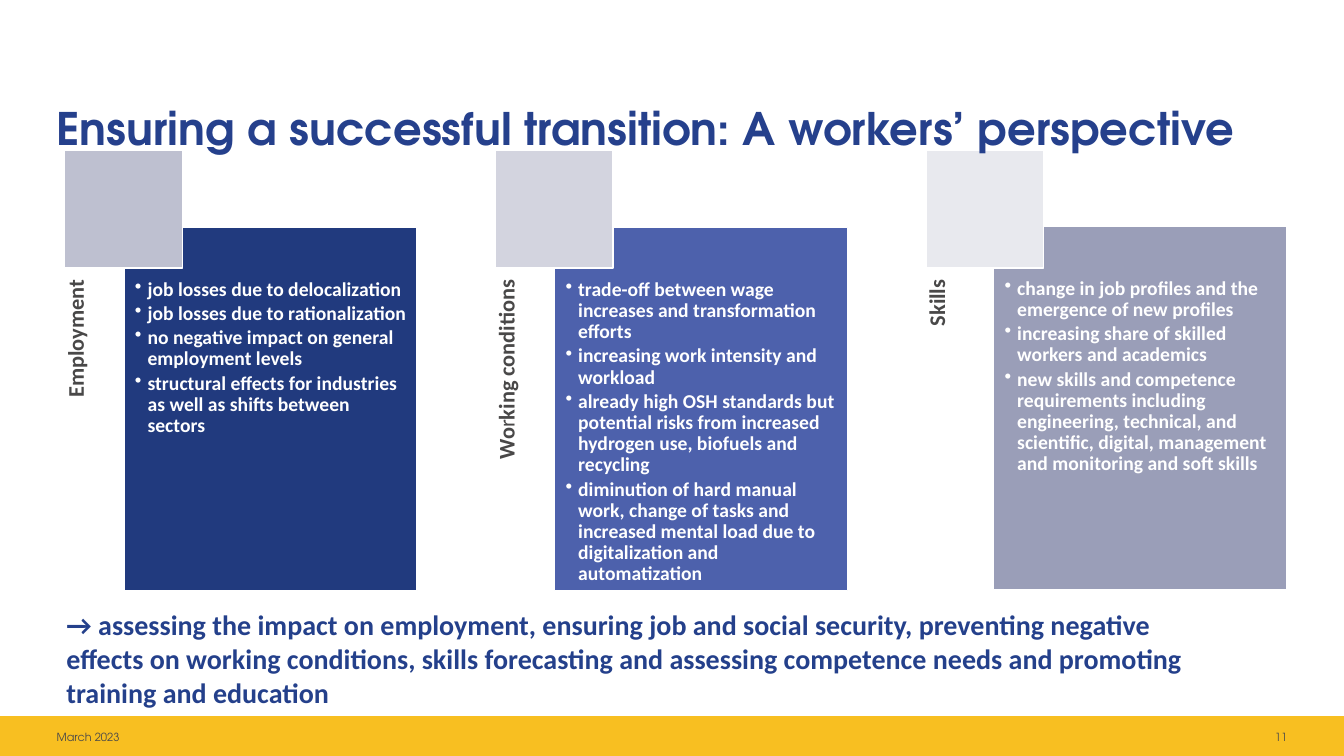
from lxml import etree
from pptx import Presentation
from pptx import util as u
from pptx.dml.color import RGBColor
from pptx.enum import shapes, text
from pptx.oxml.ns import qn

COLOURS = {
    "white": "FFFFFF", "title": "25408C", "conclusion": "24408B",
    "label": "494848", "footer": "4A4949", "band": "F8BF21",
}
BODY, DISPLAY = "Calibri", "TeX Gyre Adventor"
TITLE = "Ensuring a successful transition: A workers’ perspective"
CONCLUSION = (
    "→ assessing the impact on employment, ensuring job and social security, "
    "preventing negative effects on working conditions, skills forecasting and "
    "assessing competence needs and promoting training and education"
)
# Label runs are (text, bold); the panel offset is measured from the square.
TOPICS = [
    {
        "label": [("Employment", True)],
        "panel": "213A7E", "square": "BEC0D0", "offset": (42.4, 55.4),
        "points": [
            "job losses due to delocalization",
            "job losses due to rationalization",
            "no negative impact on general employment levels",
            "structural effects for industries as well as shifts between sectors",
        ],
    },
    {
        "label": [("Wo", True), ("r", False), ("king conditions", True)],
        "panel": "4D61AC", "square": "D3D4DF", "offset": (42.4, 55.4),
        "points": [
            "trade-off between wage increases and transformation efforts",
            "increasing work intensity and workload",
            "already high OSH standards but potential risks from increased "
            "hydrogen use, biofuels and recycling",
            "diminution of hard manual work, change of tasks and increased "
            "mental load due to digitalization and automatization",
        ],
    },
    {
        "label": [("Skills", True)],
        "panel": "9A9EB8", "square": "E8E9EE", "offset": (48.4, 54.6),
        "points": [
            "change in job profiles and the emergence of new profiles",
            "increasing share of skilled workers and academics",
            "new skills and competence requirements including engineering, "
            "technical, and scientific, digital, management and monitoring "
            "and soft skills",
        ],
    },
]

SLIDE_W, SLIDE_H = 960, 540
MARGIN = 40.4
FIRST_X, SQUARE_Y, SQUARE = 46.2, 107.2, 84.2
PITCH = 307.6
PANEL_W, PANEL_H = 209.4, 259.2
LABEL_Y, LABEL_H = 162.6, 41.9
BAND_Y = 511.6


def add_rectangle(slide, x, y, width, height, fill, line=None):
    shape = slide.shapes.add_shape(
        shapes.MSO_SHAPE.RECTANGLE, u.Pt(x), u.Pt(y), u.Pt(width), u.Pt(height))
    shape.shadow.inherit = False
    shape.fill.solid()
    shape.fill.fore_color.rgb = RGBColor.from_string(fill)
    if line:
        shape.line.color.rgb = RGBColor.from_string(line)
        shape.line.width = u.Pt(1)
    else:
        shape.line.fill.background()
    return shape


def add_bullet(paragraph, indent):
    properties = paragraph._p.get_or_add_pPr()
    properties.set("marL", str(u.Pt(indent)))
    properties.set("indent", str(-u.Pt(indent)))
    etree.SubElement(properties, qn("a:buChar")).set("char", "•")


def write(shape, paragraphs, *, size, colour, font=BODY, bold=True,
          align=text.PP_ALIGN.LEFT, anchor=text.MSO_ANCHOR.TOP,
          insets=(0, 0, 0, 0), spacing=1.0, after=0, bullets=False):
    """Fill a shape; each paragraph is a string or a list of (text, bold) runs."""
    frame = shape.text_frame
    frame.word_wrap = True
    frame.vertical_anchor = anchor
    (frame.margin_left, frame.margin_top,
     frame.margin_right, frame.margin_bottom) = map(u.Pt, insets)
    for index, content in enumerate(paragraphs):
        paragraph = frame.add_paragraph() if index else frame.paragraphs[0]
        if bullets:
            add_bullet(paragraph, 9)
        paragraph.alignment = align
        paragraph.line_spacing = spacing
        paragraph.space_after = u.Pt(after)
        runs = [(content, bold)] if isinstance(content, str) else content
        for words, run_bold in runs:
            run = paragraph.add_run()
            run.text = words
            run.font.name = font
            run.font.size = u.Pt(size)
            run.font.bold = run_bold
            run.font.color.rgb = RGBColor.from_string(colour)


def add_text(slide, x, y, width, height, paragraphs, **style):
    box = slide.shapes.add_textbox(u.Pt(x), u.Pt(y), u.Pt(width), u.Pt(height))
    write(box, paragraphs, **style)
    return box


def add_topic(slide, x, topic):
    # The label is turned about its centre to stand below the square.
    label = add_text(
        slide, x + (LABEL_H - PANEL_H) / 2, LABEL_Y + (PANEL_H - LABEL_H) / 2,
        PANEL_H, LABEL_H, [topic["label"]], size=16, colour=COLOURS["label"],
        align=text.PP_ALIGN.RIGHT, insets=(0, 0, 37.1, 0), spacing=0.9)
    label.rotation = 270
    dx, dy = topic["offset"]
    panel = add_rectangle(slide, x + dx, SQUARE_Y + dy, PANEL_W, PANEL_H,
                          topic["panel"], COLOURS["white"])
    write(panel, topic["points"], size=14, colour=COLOURS["white"],
          insets=(7.8, 37.1, 7.8, 7.8), spacing=0.9, after=2.1, bullets=True)
    add_rectangle(slide, x, SQUARE_Y, SQUARE, SQUARE,
                  topic["square"], COLOURS["white"])


def main():
    presentation = Presentation()
    presentation.slide_width = u.Pt(SLIDE_W)
    presentation.slide_height = u.Pt(SLIDE_H)
    slide = presentation.slides.add_slide(presentation.slide_layouts[6])

    add_rectangle(slide, 0, BAND_Y, SLIDE_W, SLIDE_H - BAND_Y, COLOURS["band"])
    for column, topic in enumerate(TOPICS):
        add_topic(slide, FIRST_X + column * PITCH, topic)
    add_text(slide, MARGIN, 76.4, 878.6, 56.7, [TITLE], size=32,
             colour=COLOURS["title"], font=DISPLAY, spacing=0.9)

    footer_w = 141.8
    for x, words, align in (
        (MARGIN, "March 2023", text.PP_ALIGN.LEFT),
        (SLIDE_W - MARGIN - footer_w, "11", text.PP_ALIGN.RIGHT),
    ):
        add_text(slide, x, 518.4, footer_w, 16.6, [words], size=8,
                 colour=COLOURS["footer"], font=DISPLAY, bold=False,
                 align=align, anchor=text.MSO_ANCHOR.MIDDLE)
    add_text(slide, MARGIN, 430.6, 829.4, 80, [CONCLUSION], size=20,
             colour=COLOURS["conclusion"], insets=(7.2, 3.6, 7.2, 3.6))
    presentation.save("out.pptx")


if __name__ == "__main__":
    main()
